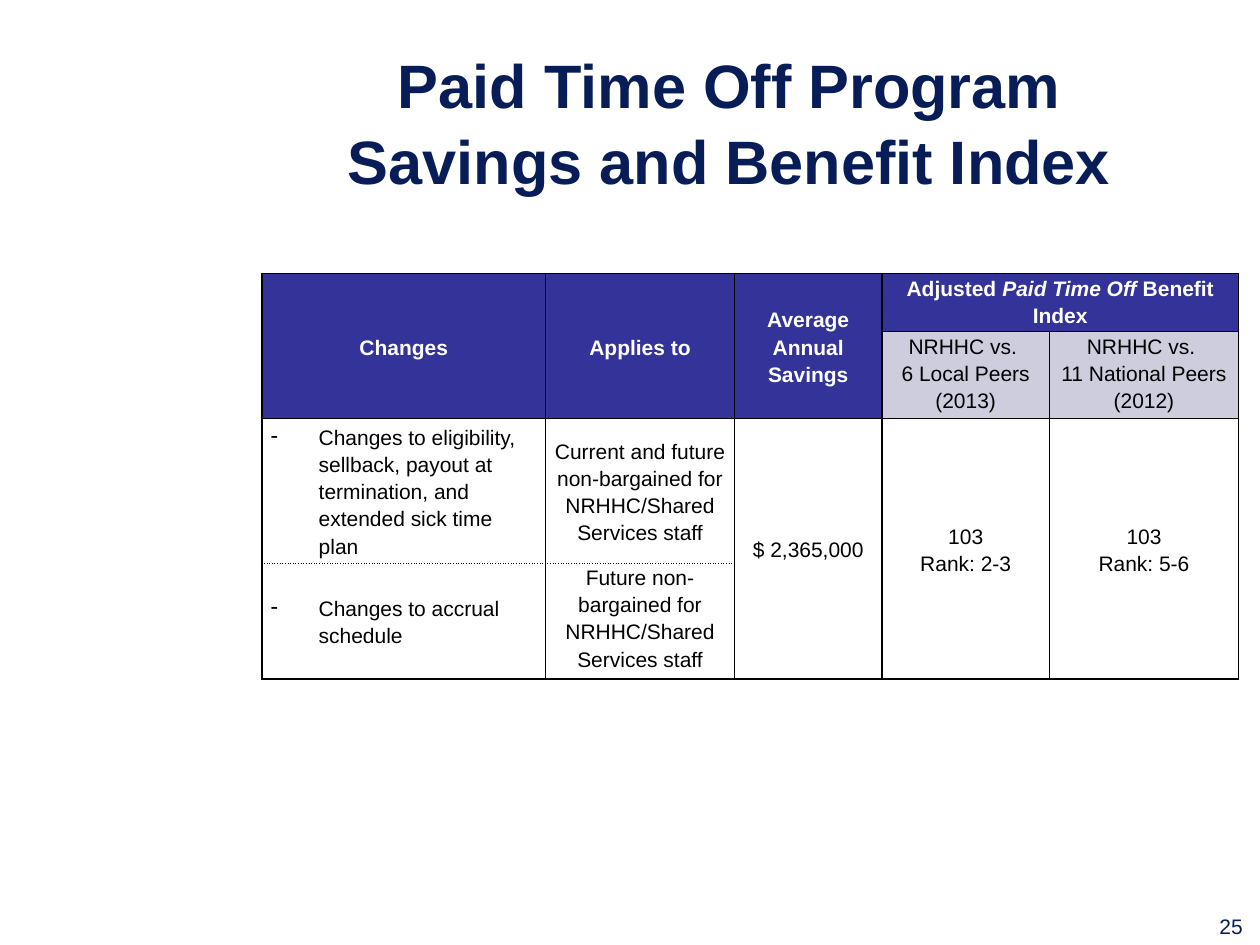
from dataclasses import dataclass
from typing import Optional

from lxml.etree import SubElement
from pptx import Presentation
from pptx.dml.color import RGBColor
from pptx.enum.text import MSO_ANCHOR, PP_ALIGN
from pptx.oxml import parse_xml
from pptx.oxml.ns import nsdecls, qn
from pptx.util import Inches, Pt

COLORS = {
    "navy": "081D58",
    "header": "333399",
    "subheader": "CDCDDE",
    "white": "FFFFFF",
    "black": "000000",
}
COLUMN_WIDTHS = (2.25, 1.5, 1.17, 1.33, 1.5)
ROW_HEIGHTS = (0.43, 0.65, 1.07, 0.86)
HEADER = {"bold": True, "color": "white"}
BODY = {"bold": False, "color": "black"}


@dataclass
class TableCell:
    row: int
    column: int
    lines: tuple[str, ...]
    fill: Optional[str] = None
    row_span: int = 1
    column_span: int = 1
    bullet: bool = False
    top: bool = False


CELLS = (
    # Header rows; asterisks enclose italic words
    TableCell(0, 0, ("Changes",), "header", row_span=2),
    TableCell(0, 1, ("Applies to",), "header", row_span=2),
    TableCell(0, 2, ("Average Annual Savings",), "header", row_span=2),
    TableCell(0, 3, ("Adjusted *Paid Time Off *Benefit Index",), "header",
              column_span=2, top=True),
    TableCell(1, 3, ("NRHHC vs. ", "6 Local Peers", "(2013)"), "subheader", top=True),
    TableCell(1, 4, ("NRHHC vs. ", "11 National Peers", "(2012)"), "subheader", top=True),
    # Body rows
    TableCell(2, 0, ("Changes to eligibility, sellback, payout at termination, "
                     "and extended sick time plan",), bullet=True),
    TableCell(2, 1, ("Current and future non-bargained for NRHHC/Shared Services staff",)),
    TableCell(2, 2, ("$ 2,365,000",), row_span=2),
    TableCell(2, 3, ("103", "Rank: 2-3"), row_span=2),
    TableCell(2, 4, ("103", "Rank: 5-6"), row_span=2),
    TableCell(3, 0, ("Changes to accrual schedule",), bullet=True),
    TableCell(3, 1, ("Future non-bargained for", "NRHHC/Shared Services staff"), top=True),
)


def format_font(font, size: float, color: str, **values) -> None:
    for name, value in {"name": "Arial", "size": Pt(size), **values}.items():
        setattr(font, name, value)
    font.color.rgb = RGBColor.from_string(COLORS[color])


def add_text(page, text: str, area: tuple, size: float, wrap: bool, bold: bool,
             **paragraph_format) -> None:
    box = page.shapes.add_textbox(*(Inches(length) for length in area))
    frame = box.text_frame
    frame.word_wrap = wrap
    frame.vertical_anchor = MSO_ANCHOR.MIDDLE
    para = frame.paragraphs[0]
    para.text = text
    for name, value in paragraph_format.items():
        setattr(para, name, value)
    for span in para.runs:
        format_font(span.font, size, "navy", bold=bold)


def add_borders(cell, row: int, column: int) -> None:
    properties = cell._tc.get_or_add_tcPr()
    dotted = {(2, "B"), (3, "T")} if column < 2 else set()
    for index, side in enumerate("LRTB"):
        dash = "sysDot" if (row, side) in dotted else "solid"
        properties.insert(index, parse_xml(
            f'<a:ln{side} {nsdecls("a")} w="12700"><a:solidFill>'
            f'<a:srgbClr val="{COLORS["black"]}"/></a:solidFill>'
            f'<a:prstDash val="{dash}"/></a:ln{side}>'))


def add_bullet(para) -> None:
    properties = para._p.get_or_add_pPr()
    indent = Inches(0.38)
    properties.set("marL", str(indent))
    properties.set("indent", str(-indent))
    SubElement(properties, qn("a:buChar"), char="-")


def fill_cell(table, entry: TableCell) -> None:
    cell = table.cell(entry.row, entry.column)
    if entry.row_span > 1 or entry.column_span > 1:
        cell.merge(table.cell(entry.row + entry.row_span - 1,
                              entry.column + entry.column_span - 1))
    if entry.fill:
        cell.fill.solid()
        cell.fill.fore_color.rgb = RGBColor.from_string(COLORS[entry.fill])
    layout = {
        "margin_left": Inches(0.07),
        "margin_right": Inches(0.07),
        "margin_top": 0,
        "margin_bottom": 0,
        "vertical_anchor": MSO_ANCHOR.TOP if entry.top else MSO_ANCHOR.MIDDLE,
    }
    for name, value in layout.items():
        setattr(cell, name, value)

    style = HEADER if entry.fill == "header" else BODY
    frame = cell.text_frame
    for index, line in enumerate(entry.lines):
        para = frame.add_paragraph() if index else frame.paragraphs[0]
        para.line_spacing = 1.15
        if entry.bullet:
            add_bullet(para)
        else:
            para.alignment = PP_ALIGN.CENTER
        for part, words in enumerate(line.split("*")):
            span = para.add_run()
            span.text = words
            format_font(span.font, 12, italic=part % 2 == 1, **style)


def add_savings_table(page) -> None:
    table = page.shapes.add_table(
        len(ROW_HEIGHTS), len(COLUMN_WIDTHS), Inches(2.08), Inches(2.17),
        Inches(sum(COLUMN_WIDTHS)), Inches(sum(ROW_HEIGHTS))).table
    table.first_row = table.horz_banding = False
    for column, width in zip(table.columns, COLUMN_WIDTHS):
        column.width = Inches(width)
    for row, height in zip(table.rows, ROW_HEIGHTS):
        row.height = Inches(height)
    for row in range(len(ROW_HEIGHTS)):
        for column in range(len(COLUMN_WIDTHS)):
            cell = table.cell(row, column)
            cell.fill.background()
            add_borders(cell, row, column)
    for entry in CELLS:
        fill_cell(table, entry)


def main() -> None:
    deck = Presentation()
    deck.slide_width, deck.slide_height = Inches(10), Inches(7.5)
    page = deck.slides.add_slide(deck.slide_layouts[6])

    # Page number
    add_text(page, "25", (9.58, 7.2, 0.42, 0.3), 12, wrap=False, bold=False)
    # Title
    add_text(page, "Paid Time Off Program\vSavings and Benefit Index",
             (2.08, 0.33, 7.42, 1.25), 35, wrap=True, bold=True,
             alignment=PP_ALIGN.CENTER, line_spacing=1.04)
    # Savings and benefit index
    add_savings_table(page)

    deck.save("out.pptx")


if __name__ == "__main__":
    main()
